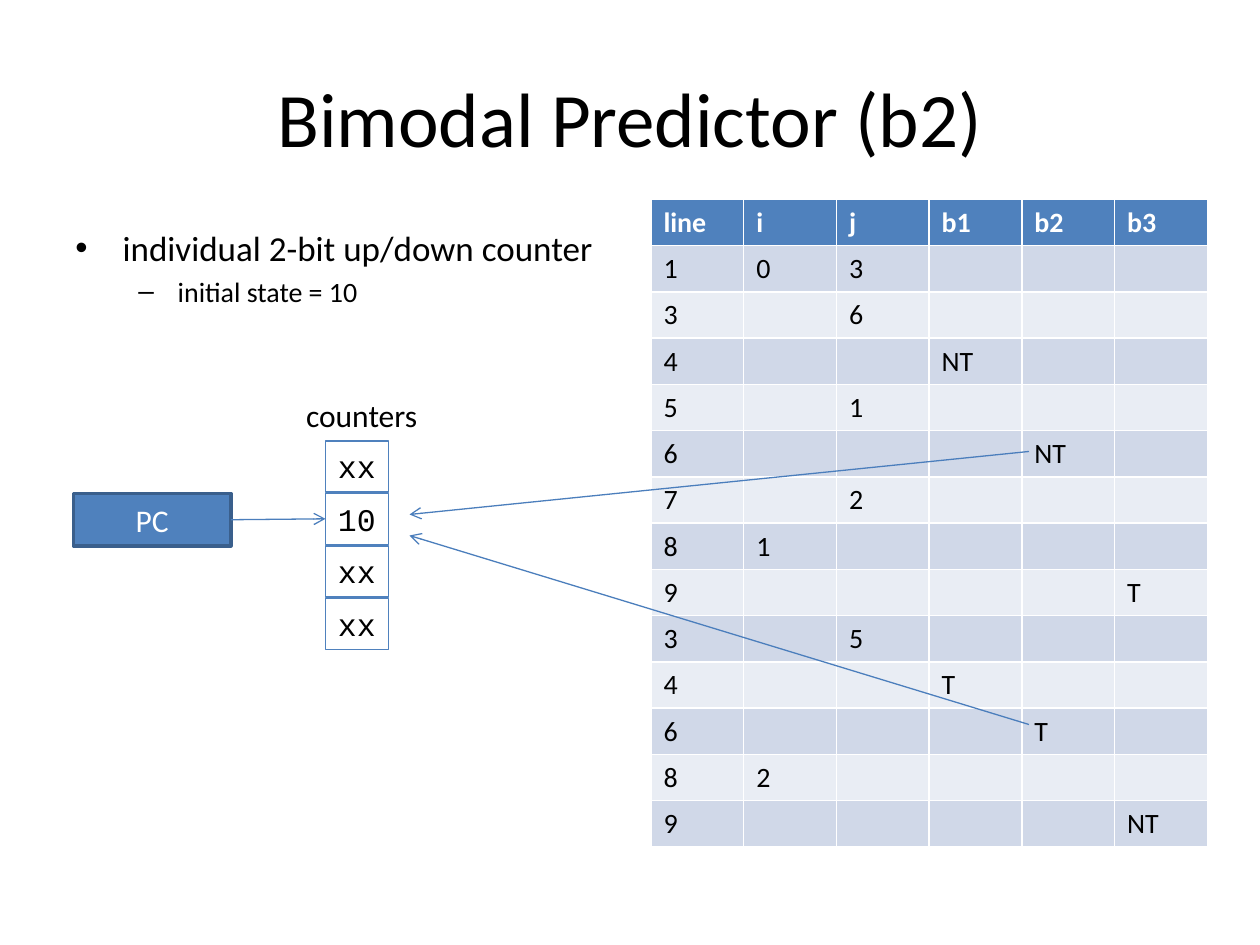
from dataclasses import dataclass

import pptx
import pptx.dml.color
import pptx.enum.shapes
import pptx.enum.text
import pptx.oxml
import pptx.oxml.ns
import pptx.util
from lxml import etree

Pt = pptx.util.Pt
RGBColor = pptx.dml.color.RGBColor
PP_ALIGN = pptx.enum.text.PP_ALIGN
MSO_ANCHOR = pptx.enum.text.MSO_ANCHOR
qn = pptx.oxml.ns.qn

BLACK = RGBColor(0x00, 0x00, 0x00)
WHITE = RGBColor(0xFF, 0xFF, 0xFF)
BLUE = RGBColor(0x4F, 0x81, 0xBD)
DARK_BLUE = RGBColor(0x3A, 0x5F, 0x8C)
ARROW_BLUE = RGBColor(0x4B, 0x7E, 0xBC)
BAND_DARK = RGBColor(0xD0, 0xD8, 0xE8)
BAND_LIGHT = RGBColor(0xE9, 0xED, 0xF4)
SANS = "Calibri"
MONO = "Courier New"

HEADERS = ("line", "i", "j", "b1", "b2", "b3")
TRACE = (
    {"line": "1", "i": "0", "j": "3"},
    {"line": "3", "j": "6"},
    {"line": "4", "b1": "NT"},
    {"line": "5", "j": "1"},
    {"line": "6", "b2": "NT"},
    {"line": "7", "j": "2"},
    {"line": "8", "i": "1"},
    {"line": "9", "b3": "T"},
    {"line": "3", "j": "5"},
    {"line": "4", "b1": "T"},
    {"line": "6", "b2": "T"},
    {"line": "8", "i": "2"},
    {"line": "9", "b3": "NT"},
)
COUNTERS = ("xx", "10", "xx", "xx")


@dataclass(frozen=True)
class Bullet:
    text: str
    char: str
    size: float
    left: float
    hanging: float


@dataclass(frozen=True)
class Box:
    text: str
    left: float
    top: float
    width: float
    height: float
    fill: RGBColor
    line: RGBColor
    line_width: float
    font: str
    color: RGBColor
    align: PP_ALIGN = PP_ALIGN.LEFT
    anchor: MSO_ANCHOR = MSO_ANCHOR.TOP


@dataclass(frozen=True)
class Arrow:
    x1: float
    y1: float
    x2: float
    y2: float


BULLETS = (
    Bullet("individual 2-bit up/down counter", "•", 20, 27, 27),
    Bullet("initial state = 10", "–", 16, 58.5, 22.5),
)
PC_BOX = Box("PC", 42, 282, 90, 30, BLUE, DARK_BLUE, 2, SANS, WHITE,
             PP_ALIGN.CENTER, MSO_ANCHOR.MIDDLE)
COUNTER_BOXES = [
    Box(text, 186, 252 + 30 * i, 36, 29.1, WHITE, BLUE, 0.75, MONO, BLACK)
    for i, text in enumerate(COUNTERS)
]
ARROWS = (
    Arrow(132, 297, 186, 296.5),
    Arrow(588, 258, 234, 294),
    Arrow(588, 414, 234, 306),
)


def format_runs(p, size: float, color: RGBColor, font: str = SANS, bold: bool = False) -> None:
    for r in p.runs:
        r.font.name = font
        r.font.size = Pt(size)
        r.font.bold = bold
        r.font.color.rgb = color


def add_title(slide, text: str) -> None:
    sp = slide.shapes.title
    sp.left, sp.top, sp.width, sp.height = Pt(36), Pt(21.6), Pt(648), Pt(90)
    tf = sp.text_frame
    tf.text = text
    tf.vertical_anchor = MSO_ANCHOR.MIDDLE
    p = tf.paragraphs[0]
    p.alignment = PP_ALIGN.CENTER
    format_runs(p, 44, BLACK)


def add_bullets(slide, bullets: tuple[Bullet, ...]) -> None:
    tf = slide.shapes.add_textbox(Pt(36), Pt(126), Pt(648), Pt(356.4)).text_frame
    tf.word_wrap = True
    for i, bullet in enumerate(bullets):
        p = tf.add_paragraph() if i else tf.paragraphs[0]
        p.text = bullet.text
        p.level = i
        p.space_before = Pt(0.2 * bullet.size)
        format_runs(p, bullet.size, BLACK)
        pPr = p._p.get_or_add_pPr()
        pPr.set("marL", str(Pt(bullet.left)))
        pPr.set("indent", str(-Pt(bullet.hanging)))
        etree.SubElement(pPr, qn("a:buFont"), typeface="Arial")
        etree.SubElement(pPr, qn("a:buChar"), char=bullet.char)


def fill_cell(cell, text: str, fill: RGBColor, color: RGBColor, bold: bool) -> None:
    cell.fill.solid()
    cell.fill.fore_color.rgb = fill
    p = cell.text_frame.paragraphs[0]
    p.text = text
    format_runs(p, 16, color, bold=bold)
    if not text:
        # The end mark keeps an empty cell as low as a filled one.
        etree.SubElement(p._p, qn("a:endParaRPr"), sz="1600")


def add_trace_table(slide) -> None:
    rows = len(TRACE) + 1
    table = slide.shapes.add_table(
        rows, len(HEADERS), Pt(372), Pt(114), Pt(318), Pt(26.4 * rows)).table
    for column in table.columns:
        column.width = Pt(53)
    for row in table.rows:
        row.height = Pt(26.4)
    for c, name in enumerate(HEADERS):
        fill_cell(table.cell(0, c), name, BLUE, WHITE, True)
        for r, step in enumerate(TRACE, start=1):
            band = BAND_DARK if r % 2 else BAND_LIGHT
            fill_cell(table.cell(r, c), step.get(name, ""), band, BLACK, False)


def add_box(slide, box: Box) -> None:
    sp = slide.shapes.add_shape(
        pptx.enum.shapes.MSO_SHAPE.RECTANGLE,
        Pt(box.left), Pt(box.top), Pt(box.width), Pt(box.height))
    sp.shadow.inherit = False
    sp.fill.solid()
    sp.fill.fore_color.rgb = box.fill
    sp.line.color.rgb = box.line
    sp.line.width = Pt(box.line_width)
    tf = sp.text_frame
    tf.text = box.text
    tf.word_wrap = True
    tf.vertical_anchor = box.anchor
    p = tf.paragraphs[0]
    p.alignment = box.align
    format_runs(p, 18, box.color, box.font)


def add_counters_label(slide) -> None:
    tf = slide.shapes.add_textbox(Pt(167.8), Pt(223), Pt(78.5), Pt(29.1)).text_frame
    tf.text = "counters"
    tf.word_wrap = False
    format_runs(tf.paragraphs[0], 18, BLACK)


def add_arrow(slide, arrow: Arrow) -> None:
    line = slide.shapes.add_connector(
        pptx.enum.shapes.MSO_CONNECTOR.STRAIGHT,
        Pt(arrow.x1), Pt(arrow.y1), Pt(arrow.x2), Pt(arrow.y2))
    line.line.color.rgb = ARROW_BLUE
    line.line.width = Pt(0.75)
    etree.SubElement(line.line._get_or_add_ln(), qn("a:tailEnd"), type="arrow")
    etree.SubElement(line._element.spPr, qn("a:effectLst"))


def main() -> None:
    prs = pptx.Presentation()
    prs.slide_width, prs.slide_height = Pt(720), Pt(540)
    slide = prs.slides.add_slide(prs.slide_layouts[5])
    add_title(slide, "Bimodal Predictor (b2)")
    add_bullets(slide, BULLETS)
    add_trace_table(slide)
    add_counters_label(slide)
    for box in (PC_BOX, *COUNTER_BOXES):
        add_box(slide, box)
    for arrow in ARROWS:
        add_arrow(slide, arrow)
    prs.save("out.pptx")


if __name__ == "__main__":
    main()
